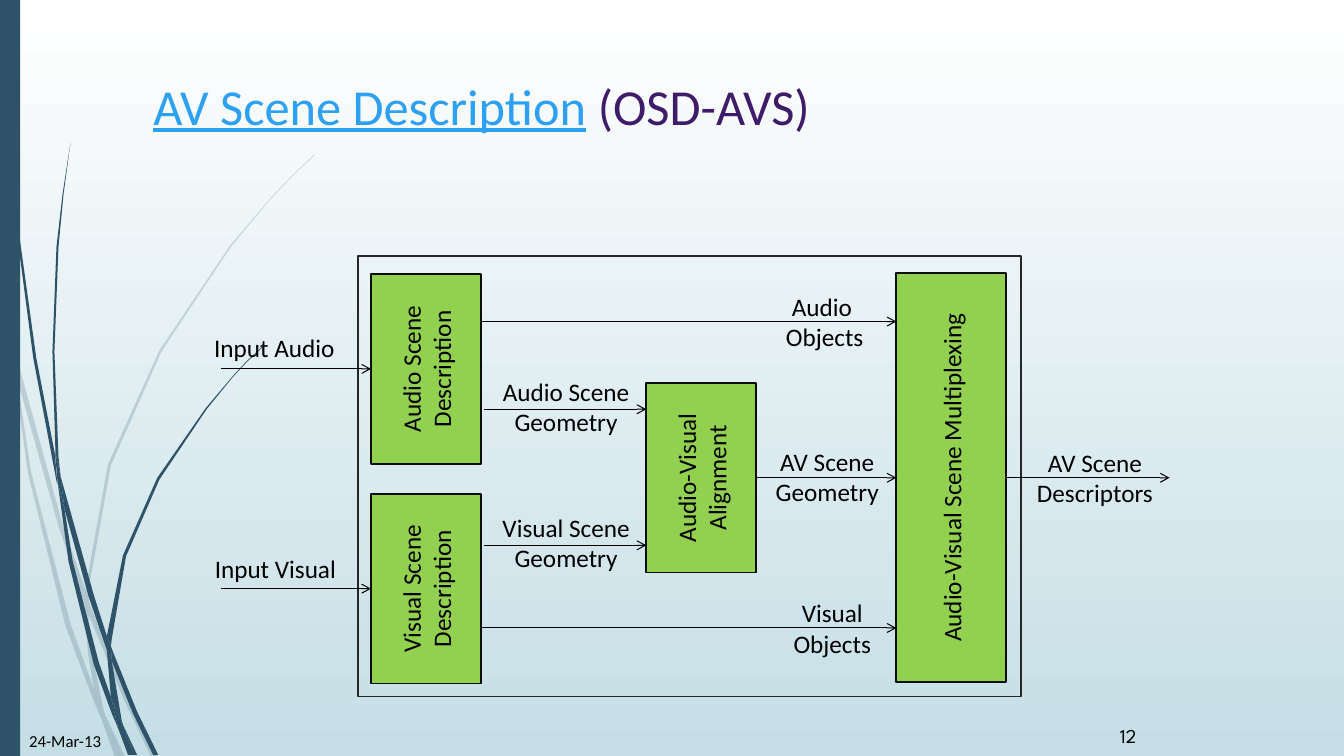
from typing import NamedTuple

from lxml import etree
from pptx import Presentation
from pptx.dml.color import RGBColor
from pptx.enum.shapes import MSO_CONNECTOR, MSO_SHAPE
from pptx.enum.text import MSO_ANCHOR as ANCHOR, PP_ALIGN as ALIGN
from pptx.oxml.ns import qn
from pptx.util import Inches, Pt

TEAL = RGBColor(0x2E, 0x53, 0x69)
PALE_TEAL = RGBColor(0xC5, 0xDE, 0xE5)
WHITE = RGBColor(0xFF, 0xFF, 0xFF)
BLACK = RGBColor(0, 0, 0)
GREEN = RGBColor(0x92, 0xD0, 0x50)
BLOCK_EDGE = RGBColor(0x0D, 0x0D, 0x0D)
FRAME_EDGE = RGBColor(0x27, 0x27, 0x27)
LINK_BLUE = RGBColor(0x2D, 0xA0, 0xF1)
PURPLE = RGBColor(0x3F, 0x1C, 0x6A)
LEFT_SIDE, RIGHT_SIDE = 1, 3

# Outlines of the grass blades, in inches.
PALE_BLADES = [
    [(0.11, 3.5), (0.09, 3.22), (0, 2.82), (0, 2.99), (0.1, 3.44)],
    [(0.58, 5.22), (0.84, 5.99), (0.85, 5.86), (0.62, 5.2), (0.14, 3.45), (0.17, 3.76)],
    [(0.92, 6.07), (0.88, 5.96), (0.88, 6.1), (1.23, 6.94), (1.5, 7.51), (1.55, 7.51),
     (1.27, 6.92)],
    [(1.19, 7.51), (1.24, 7.51), (1.05, 7.11)],
    [(0.93, 6.83), (0.7, 6.19), (0.31, 4.69), (0.17, 3.76), (0.11, 3.5), (0.28, 4.7),
     (0.65, 6.21), (0.92, 6.93), (1.01, 7.14), (0.99, 7.07)],
    [(0.84, 5.99), (0.87, 6.46), (0.93, 6.83), (0.96, 6.92), (1.05, 7.11), (1.03, 7.06),
     (0.91, 6.46), (0.88, 6.1), (0.88, 6.08)],
    [(0.88, 5.84), (1.1, 4.62), (1.6, 3.49), (2.29, 2.45), (2.68, 1.98), (2.9, 1.75),
     (3.12, 1.54), (3.12, 1.53), (2.89, 1.75), (2.68, 1.97), (2.28, 2.44), (1.58, 3.48),
     (1.07, 4.61), (0.85, 5.84), (0.85, 5.86), (0.88, 5.96)],
    [(1.01, 7.14), (1.14, 7.51), (1.19, 7.51)],
    [(0.88, 6.08), (0.88, 6.1), (0.88, 5.96), (0.85, 5.86), (0.84, 5.99)],
    [(0.96, 6.92), (0.93, 6.83), (0.99, 7.07), (1.01, 7.14), (1.19, 7.51), (1.05, 7.11)],
]
DARK_BLADES = [
    [(0.07, 1.1), (0.17, 2.33), (0.33, 3.55), (0.56, 4.77), (0.57, 4.81), (0.55, 4.57),
     (0.55, 4.53), (0.36, 3.55), (0.19, 2.32), (0.08, 1.09), (0.05, 0.48), (0.04, 0),
     (0.03, 0), (0.04, 0.48)],
    [(0.88, 5.92), (1.06, 6.45), (1.06, 6.33), (1.06, 6.31), (0.93, 5.9), (0.6, 4.72),
     (0.64, 5.05)],
    [(1.13, 6.49), (1.1, 6.41), (1.11, 6.56), (1.32, 7.08), (1.52, 7.49), (1.57, 7.49),
     (1.36, 7.06)],
    [(1.1, 6.91), (0.98, 6.57), (0.72, 5.56), (0.64, 5.05), (0.57, 4.77), (0.68, 5.57),
     (0.93, 6.59), (1.11, 7.08), (1.17, 7.22), (1.16, 7.17)],
    [(0.6, 4.72), (0.58, 4.53), (0.54, 3.49), (0.58, 2.45), (0.63, 1.93), (0.7, 1.41),
     (0.62, 1.93), (0.56, 2.45), (0.52, 3.49), (0.55, 4.49)],
    [(1.33, 7.49), (1.36, 7.49), (1.22, 7.19)],
    [(0.57, 4.77), (0.64, 5.05), (0.6, 4.72), (0.55, 4.49), (0.55, 4.53)],
    [(1.11, 6.33), (1.25, 5.52), (1.58, 4.76), (2.05, 4.06), (2.31, 3.74), (2.45, 3.59),
     (2.61, 3.44), (2.6, 3.44), (2.45, 3.58), (2.31, 3.73), (2.04, 4.05), (1.56, 4.74),
     (1.22, 5.51), (1.06, 6.31), (1.1, 6.41)],
    [(1.17, 7.22), (1.27, 7.49), (1.31, 7.49)],
    [(1.06, 6.45), (1.1, 6.91), (1.16, 7.06), (1.22, 7.19), (1.21, 7.16), (1.11, 6.56),
     (1.09, 6.51)],
    [(1.06, 6.45), (1.09, 6.51), (1.11, 6.56), (1.1, 6.41), (1.06, 6.31), (1.06, 6.33)],
    [(1.16, 7.06), (1.1, 6.91), (1.16, 7.17), (1.17, 7.22), (1.3, 7.49), (1.33, 7.49),
     (1.22, 7.19)],
]

# Blocks and flows are measured from the corner of the frame.
BLOCK_WIDTH = 1.09
BLOCKS = {  # text: left, top, height
    "Audio Scene Description": (0.13, 0.18, 1.88),
    "Visual Scene Description": (0.13, 2.36, 1.88),
    "Audio-Visual Alignment": (2.86, 1.26, 1.88),
    "Audio-Visual Scene Multiplexing": (5.34, 0.17, 4.06),
}
AUDIO, VISUAL, ALIGNMENT, MULTIPLEXING = BLOCKS


class Flow(NamedTuple):
    """An arrow at height y, its label, and the blocks it joins at mid-side."""
    text: str
    label_left: float
    label_width: float
    label_rise: float
    start: float
    end: float
    y: float
    source: str = ""
    target: str = ""


FLOWS = [
    Flow("Input Audio ", -1.6, 1.6, 0.41, -1.36, 0.13, 1.12, target=AUDIO),
    Flow("Input Visual ", -1.59, 1.6, 0.4, -1.36, 0.13, 3.3, target=VISUAL),
    Flow("Audio Scene Geometry", 1.28, 1.57, 0.38, 1.25, 2.86, 1.52),
    Flow("Visual Scene Geometry", 1.28, 1.57, 0.38, 1.25, 2.86, 2.87),
    Flow("Audio \nObjects", 4.13, 1, 0.35, 1.22, 5.34, 0.65),
    Flow("Visual\nObjects", 4.22, 0.97, 0.35, 1.22, 5.34, 3.69),
    Flow("AV Scene\nGeometry", 4.04, 1.23, 0.36, 3.95, 5.34, 2.2,
         ALIGNMENT, MULTIPLEXING),
    Flow("AV Scene\nDescriptors", 6.63, 1.36, 0.35, 6.43, 8.05, 2.2, MULTIPLEXING),
]


def add_run(paragraph, text, size, color, font="Calibri"):
    run = paragraph.add_run()
    run.text = text
    run.font.size, run.font.name = Pt(size), font
    run.font.color.rgb = color
    return run


def add_label(slide, text, left, top, width, height, size=18, align=ALIGN.CENTER,
              font="Calibri"):
    box = slide.shapes.add_textbox(*map(Inches, (left, top, width, height)))
    frame = box.text_frame
    frame.word_wrap = "\n" not in text
    for index, line in enumerate(text.split("\n")):
        paragraph = frame.add_paragraph() if index else frame.paragraphs[0]
        paragraph.alignment = align
        add_run(paragraph, line, size, BLACK, font)


def paint(shape, fill=None, edge=None):
    shape.shadow.inherit = False
    for part, color in ((shape.fill, fill), (shape.line.fill, edge)):
        if color is None:
            part.background()
        else:
            part.solid()
            part.fore_color.rgb = color
    if edge is not None:
        shape.line.width = Pt(1.25)


def add_rectangle(slide, left, top, width, height, fill=None, edge=None):
    shape = slide.shapes.add_shape(
        MSO_SHAPE.RECTANGLE, *map(Inches, (left, top, width, height)))
    paint(shape, fill, edge)
    return shape


def add_blade(slide, outline, opacity):
    points = [(x * 100, y * 100) for x, y in outline]
    builder = slide.shapes.build_freeform(*points[0], scale=Inches(0.01))
    builder.add_line_segments(points[1:], close=True)
    blade = builder.convert_to_shape()
    paint(blade, TEAL)
    if opacity < 100:
        color = blade._element.spPr.find(qn("a:solidFill"))[0]
        etree.SubElement(color, qn("a:alpha"), val=str(opacity * 1000))


def add_backdrop(slide):
    fill = slide.background.fill
    fill.gradient()
    fill.gradient_angle = 270
    for stop, color in zip(fill.gradient_stops, (WHITE, PALE_TEAL)):
        stop.color.rgb = color
    for blades, opacity in ((PALE_BLADES, 20), (DARK_BLADES, 100)):
        for outline in blades:
            add_blade(slide, outline, opacity)
    add_rectangle(slide, 0, 0, 0.2, 7.5, TEAL)


def set_title(slide, *box):
    title = slide.shapes.title
    title.left, title.top, title.width, title.height = map(Inches, box)
    title.text_frame.vertical_anchor = ANCHOR.TOP
    paragraph = title.text_frame.paragraphs[0]
    paragraph.alignment = ALIGN.LEFT
    add_run(paragraph, "AV Scene Description", 36, LINK_BLUE).font.underline = True
    add_run(paragraph, " (OSD-AVS)", 36, PURPLE)


def add_block(slide, text, left, top, height):
    block = add_rectangle(slide, left, top, BLOCK_WIDTH, height, GREEN, BLOCK_EDGE)
    frame = block.text_frame
    frame.word_wrap, frame.vertical_anchor = True, ANCHOR.MIDDLE
    frame._txBody.bodyPr.set("vert", "vert270")
    frame.paragraphs[0].alignment = ALIGN.CENTER
    add_run(frame.paragraphs[0], text, 18, BLACK)
    return block


def add_arrow(slide, start, end, y):
    arrow = slide.shapes.add_connector(
        MSO_CONNECTOR.STRAIGHT, *map(Inches, (start, y, end, y)))
    arrow.line.color.rgb, arrow.line.width = BLACK, Pt(0.75)
    properties = arrow._element.spPr
    etree.SubElement(properties.find(qn("a:ln")), qn("a:tailEnd"), type="arrow")
    etree.SubElement(properties, qn("a:effectLst"))
    return arrow


def add_diagram(slide, left, top, width, height):
    add_rectangle(slide, left, top, width, height, edge=FRAME_EDGE)
    blocks = {text: add_block(slide, text, left + x, top + y, block_height)
              for text, (x, y, block_height) in BLOCKS.items()}
    for flow in FLOWS:
        arrow = add_arrow(slide, left + flow.start, left + flow.end, top + flow.y)
        if flow.source:
            arrow.begin_connect(blocks[flow.source], RIGHT_SIDE)
        if flow.target:
            arrow.end_connect(blocks[flow.target], LEFT_SIDE)
        add_label(slide, flow.text, left + flow.label_left, top + flow.y - flow.label_rise,
                  flow.label_width, 0.4 if flow.text.startswith("Input") else 0.71)


def main():
    deck = Presentation()
    deck.slide_width, deck.slide_height = Inches(13.33), Inches(7.5)
    slide = deck.slides.add_slide(deck.slide_layouts[5])
    add_backdrop(slide)
    set_title(slide, 1.42, 0.69, 11.16, 1.4)
    add_diagram(slide, 3.55, 2.54, 6.58, 4.37)
    add_label(slide, "24-Mar-13", 0.19, 7.2, 1.09, 0.4, 12, ALIGN.LEFT)
    add_label(slide, "12", 11.01, 7.18, 0.61, 0.05, 14, ALIGN.LEFT, "League Spartan")
    deck.save("out.pptx")


if __name__ == "__main__":
    main()
